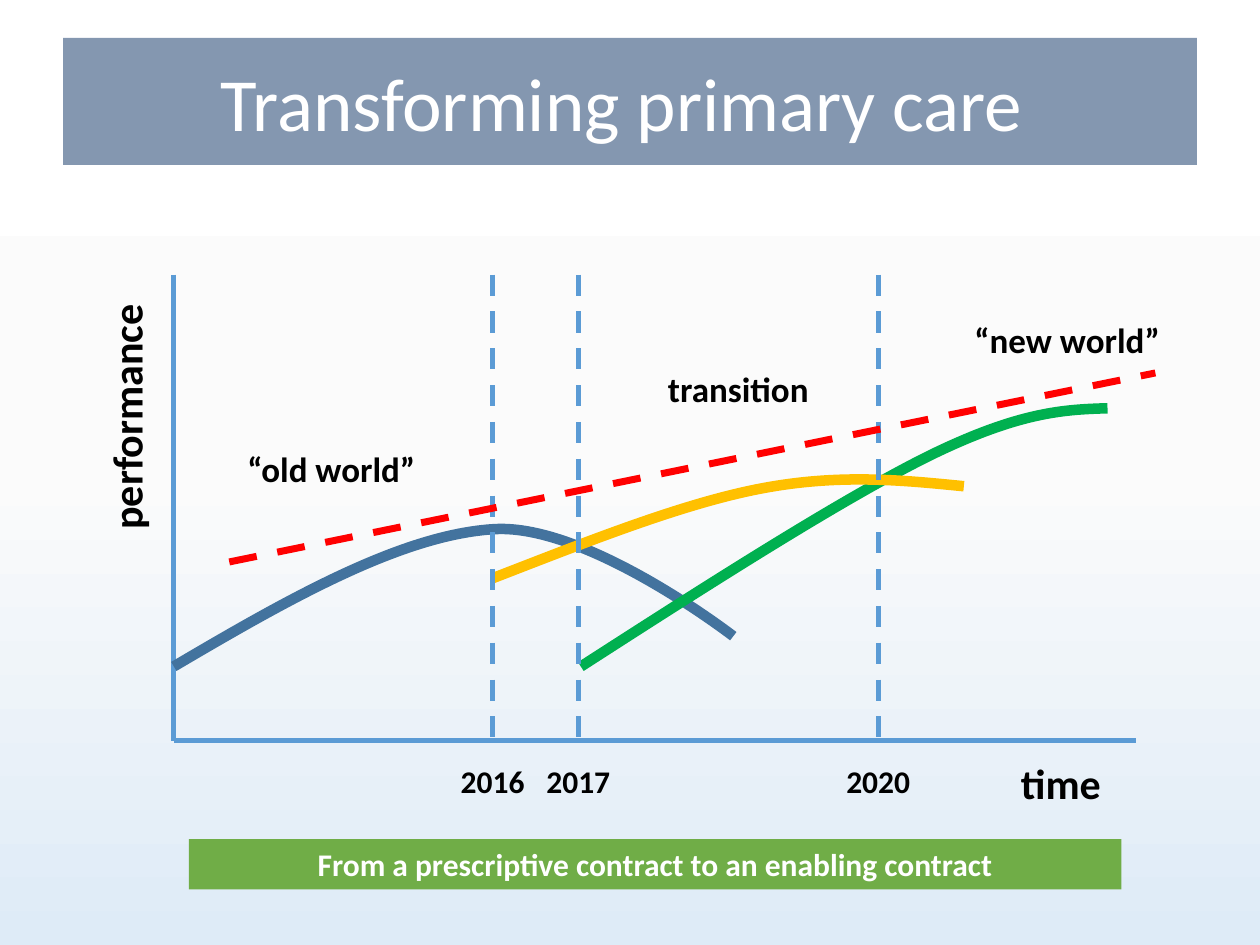
"""Build the primary care transformation slide on a grid of 100 columns by 75 rows."""
from copy import deepcopy
from dataclasses import dataclass
from typing import Optional

from lxml import etree
from pptx import Presentation
from pptx.dml.color import RGBColor
from pptx.enum.dml import MSO_LINE
from pptx.enum.shapes import MSO_CONNECTOR, MSO_SHAPE
from pptx.enum.text import MSO_ANCHOR, MSO_AUTO_SIZE, PP_ALIGN
from pptx.oxml.ns import qn
from pptx.util import Inches, Pt

STRAIGHT = MSO_CONNECTOR.STRAIGHT
DASH = MSO_LINE.DASH
RECTANGLE = MSO_SHAPE.RECTANGLE
CENTER = PP_ALIGN.CENTER
TOP, MIDDLE = MSO_ANCHOR.TOP, MSO_ANCHOR.MIDDLE
NO_FIT = MSO_AUTO_SIZE.NONE
TITLE_ONLY = 5

Point = tuple[float, float]


@dataclass(frozen=True)
class Theme:
    font: str = "Calibri"
    text: str = "000000"
    inverse: str = "FFFFFF"
    banner: str = "8497B0"
    message: str = "70AD47"
    axis: str = "5B9BD5"
    old: str = "43739E"
    new: str = "00B050"
    transition: str = "FFC000"
    trend: str = "FF0000"
    backdrop: tuple = ((0, "FFFFFF"), (0.5, "FBFBFB"), (1, "DEEBF7"))
    title_size: float = 42.9
    axis_size: float = 24
    phase_size: float = 20
    note_size: float = 18
    axis_width: float = 3
    trend_width: float = 4
    curve_width: float = 6


@dataclass(frozen=True)
class Label:
    text: str
    center: float
    top: float
    width: float
    height: float
    size: float
    rotation: float = 0


@dataclass(frozen=True)
class Line:
    start: Point
    end: Point
    color: str
    width: float
    dash: Optional[MSO_LINE] = None


@dataclass(frozen=True)
class Curve:
    color: str
    points: tuple[Point, ...]


THEME = Theme()
LEFT, RIGHT, CEILING, FLOOR = 13.8, 90.2, 21.8, 58.8
YEARS = {"2016": 39.1, "2017": 45.9, "2020": 69.7}

AXES = [
    Line((LEFT, CEILING), (LEFT, FLOOR), THEME.axis, THEME.axis_width),
    Line((LEFT, FLOOR), (RIGHT, FLOOR), THEME.axis, THEME.axis_width),
]
MARKERS = [Line((x, CEILING), (x, FLOOR), THEME.axis, THEME.axis_width, DASH) for x in YEARS.values()]
TREND = Line((18.2, 44.6), (91.7, 29.6), THEME.trend, THEME.trend_width, DASH)

CURVES = [
    Curve(THEME.old, ((13.8, 52.9), (22.8, 47.6), (31.9, 42.4), (39.3, 42),
                      (46.7, 41.6), (58.2, 50.5), (58.2, 50.5))),
    Curve(THEME.new, ((46.1, 52.9), (56.5, 46.2), (67, 39.5), (73.9, 36.1),
                      (80.9, 32.7), (84.4, 32.5), (87.9, 32.4))),
    Curve(THEME.transition, ((39.1, 45.9), (46.6, 43), (54.1, 40), (60.3, 38.8),
                             (66.5, 37.6), (71.5, 38.1), (76.5, 38.6))),
]

LABELS = [
    Label("performance", 10, 30.6, 22.8, 5, THEME.axis_size, 270),
    Label("time", 84.2, 59.6, 18.1, 5, THEME.axis_size),
    Label("transition", 58.6, 28.7, 16.8, 4.4, THEME.phase_size),
    Label("“old world”", 26.3, 35, 16.3, 4.4, THEME.phase_size),
    Label("“new world”", 84.7, 24.8, 20.5, 4.4, THEME.phase_size),
    *(Label(year, x, 60, 8.5, 4, THEME.note_size) for year, x in YEARS.items()),
]


def cells(count: float) -> int:
    """Convert grid cells to slide units."""
    return Inches(count / 10)


def place(box, left: float, top: float, width: float, height: float) -> None:
    """Move and size a box on the grid."""
    box.left, box.top = cells(left), cells(top)
    box.width, box.height = cells(width), cells(height)


def write(box, text: str, size: float, color: str, bold: bool, anchor: MSO_ANCHOR) -> None:
    """Put one centred paragraph in a box."""
    frame = box.text_frame
    frame.text = text
    frame.word_wrap = True
    frame.auto_size = NO_FIT
    frame.vertical_anchor = anchor
    para = frame.paragraphs[0]
    para.alignment = CENTER
    para.font.name = THEME.font
    para.font.size = Pt(size)
    para.font.bold = bold
    para.font.color.rgb = RGBColor.from_string(color)


def paint(box, color: str) -> None:
    """Fill a box with a plain colour."""
    box.fill.solid()
    box.fill.fore_color.rgb = RGBColor.from_string(color)


def stroke(line, color: str, width: float) -> None:
    """Set the colour and width of a line."""
    line.color.rgb = RGBColor.from_string(color)
    line.width = Pt(width)


def draw_backdrop(page) -> None:
    """Give the page a vertical gradient."""
    fill = page.background.fill
    fill.gradient()
    fill.gradient_angle = 270
    stops = page.element.find(".//" + qn("a:gsLst"))
    stops.append(deepcopy(stops[-1]))
    for stop, (position, color) in zip(fill.gradient_stops, THEME.backdrop):
        stop.position = position
        stop.color.rgb = RGBColor.from_string(color)


def draw_line(page, line: Line) -> None:
    """Draw a straight connector."""
    ends = [cells(value) for value in line.start + line.end]
    connector = page.shapes.add_connector(STRAIGHT, *ends)
    stroke(connector.line, line.color, line.width)
    if line.dash is not None:
        connector.line.dash_style = line.dash
    etree.SubElement(connector.element.spPr, qn("a:effectLst"))


def draw_curve(page, curve: Curve) -> None:
    """Draw an open outline whose points, after the first, form cubic Bézier triples."""
    start, *rest = [(cells(x), cells(y)) for x, y in curve.points]
    builder = page.shapes.build_freeform(*start)
    builder.add_line_segments(rest, close=False)
    shape = builder.convert_to_shape()
    outline = shape.element.find(".//" + qn("a:path"))
    segments = outline.findall(qn("a:lnTo"))
    for first in range(0, len(segments), 3):
        bezier = etree.SubElement(outline, qn("a:cubicBezTo"))
        for segment in segments[first:first + 3]:
            bezier.append(segment[0])
            outline.remove(segment)
    shape.fill.background()
    shape.shadow.inherit = False
    stroke(shape.line, curve.color, THEME.curve_width)


def draw_label(page, label: Label) -> None:
    """Draw a bold label centred on a column."""
    box = page.shapes.add_textbox(0, 0, 0, 0)
    place(box, label.center - label.width / 2, label.top, label.width, label.height)
    box.rotation = label.rotation
    write(box, label.text, label.size, THEME.text, True, TOP)


def main() -> None:
    """Build and save the deck."""
    deck = Presentation()
    deck.slide_width, deck.slide_height = cells(100), cells(75)
    page = deck.slides.add_slide(deck.slide_layouts[TITLE_ONLY])
    draw_backdrop(page)
    title = page.shapes.title
    place(title, 5, 3, 90, 10.1)
    paint(title, THEME.banner)
    write(title, "Transforming primary care ", THEME.title_size, THEME.inverse, False, MIDDLE)
    for line in AXES:
        draw_line(page, line)
    for curve in CURVES:
        draw_curve(page, curve)
    for line in [*MARKERS, TREND]:
        draw_line(page, line)
    for label in LABELS:
        draw_label(page, label)
    message = page.shapes.add_shape(RECTANGLE, 0, 0, 0, 0)
    place(message, 15, 66.6, 74, 4)
    paint(message, THEME.message)
    message.line.fill.background()
    message.shadow.inherit = False
    write(message, "From a prescriptive contract to an enabling contract",
          THEME.note_size, THEME.inverse, True, TOP)
    deck.save("out.pptx")


if __name__ == "__main__":
    main()
